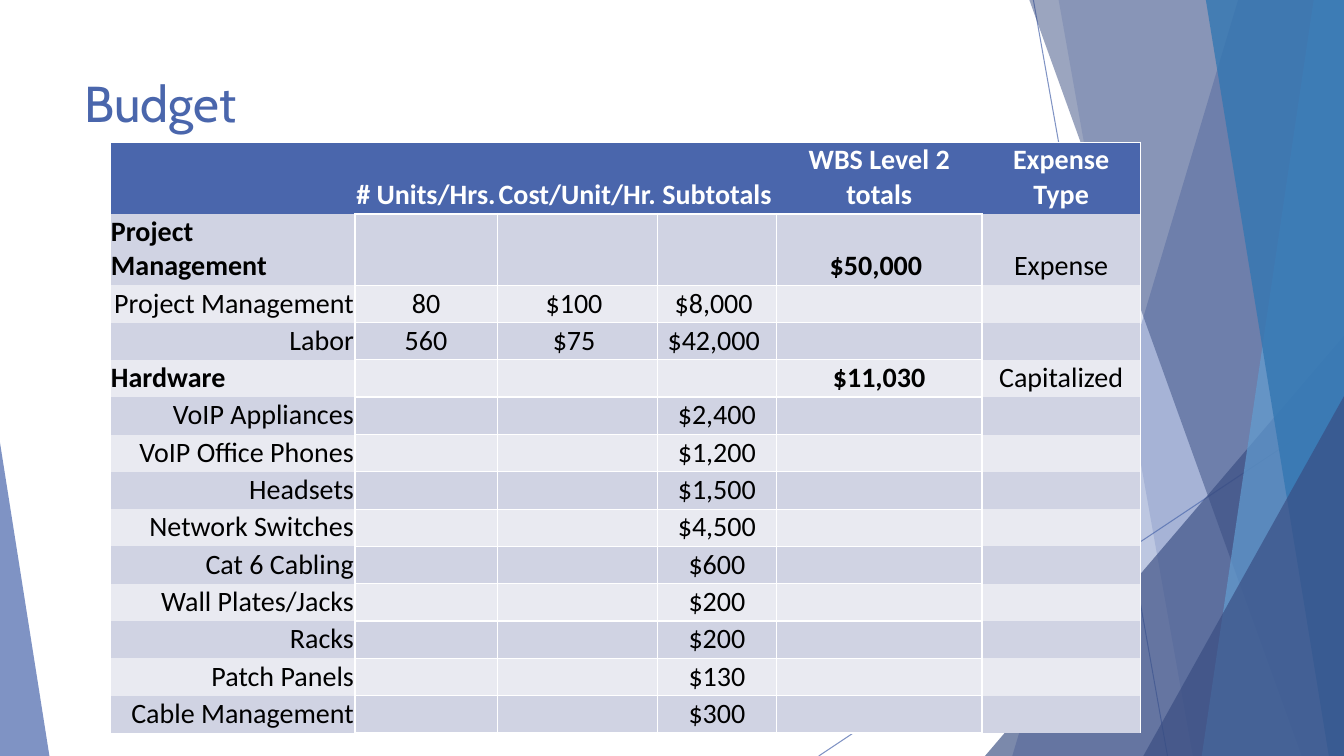
from dataclasses import astuple, dataclass

from lxml.etree import SubElement
from pptx import Presentation
from pptx.dml.color import RGBColor
from pptx.enum.shapes import MSO_CONNECTOR, MSO_SHAPE
from pptx.enum.text import MSO_ANCHOR, MSO_AUTO_SIZE, PP_ALIGN
from pptx.oxml.ns import qn
from pptx.util import Inches, Pt

WIDTH, HEIGHT = Inches(13.33), Inches(7.5)
BLUE = RGBColor(0x4A, 0x66, 0xAC)
NAVY = RGBColor(0x38, 0x4C, 0x81)
SKY = RGBColor(0x62, 0x9D, 0xD1)
OCEAN = RGBColor(0x34, 0x77, 0xB2)
DARK_ROW = RGBColor(0xD0, 0xD3, 0xE3)
LIGHT_ROW = RGBColor(0xE9, 0xEA, 0xF1)
WHITE = RGBColor(0xFF, 0xFF, 0xFF)
BLACK = RGBColor(0, 0, 0)


@dataclass
class Ray:
    """Thin line; positions are percentages of the slide."""
    start: tuple[float, float]
    end: tuple[float, float]


@dataclass
class Band:
    """Full-height area from a slanted left edge to the right of the slide."""
    top_left: float
    bottom_left: float
    color: RGBColor
    opacity: int


@dataclass
class Wedge:
    """Triangle standing on the bottom of the slide."""
    left: float
    top: float
    width: float
    apex: int
    color: RGBColor
    opacity: int


@dataclass
class BudgetLine:
    item: str
    units: str = ""
    cost: str = ""
    subtotal: str = ""
    total: str = ""
    expense: str = ""


DECORATION = [
    Ray((76.89, 0), (86.87, 100)),
    Ray((100, 53.73), (60.92, 100)),
    Band(92.12, 75.32, BLUE, 36),
    Band(78.77, 88.75, BLUE, 20),
    Wedge(73.29, 44.4, 26.71, 1, NAVY, 66),
    Band(76.59, 96.85, NAVY, 50),
    Band(97.75, 89.42, SKY, 70),
    Band(89.72, 98.87, OCEAN, 80),
    Wedge(85.07, 52.4, 14.93, 1, NAVY, 66),
    Wedge(0, 58.53, 3.68, 0, BLUE, 70),
]
COLUMN_WIDTHS = [18.23, 10.58, 11.93, 8.85, 15.3, 11.78]
ROW_HEIGHT = 3.33
BUDGET = [
    BudgetLine("", "# Units/Hrs.", "Cost/Unit/Hr.", "Subtotals",
               "WBS Level 2 totals", "Expense Type"),
    BudgetLine("Project Management", total="$50,000 ", expense="Expense"),
    BudgetLine("Project Management", "80", "$100 ", "$8,000 "),
    BudgetLine("Labor", "560", "$75 ", "$42,000 "),
    BudgetLine("Hardware", total="$11,030", expense="Capitalized"),
    BudgetLine("VoIP Appliances", subtotal="$2,400"),
    BudgetLine("VoIP Office Phones", subtotal="$1,200"),
    BudgetLine("Headsets", subtotal="$1,500"),
    BudgetLine("Network Switches", subtotal="$4,500"),
    BudgetLine("Cat 6 Cabling", subtotal="$600"),
    BudgetLine("Wall Plates/Jacks", subtotal="$200"),
    BudgetLine("Racks", subtotal="$200"),
    BudgetLine("Patch Panels", subtotal="$130"),
    BudgetLine("Cable Management", subtotal="$300"),
]
HARDWARE_ROW = 4
LAST_COLUMN = len(COLUMN_WIDTHS) - 1


def across(percent: float) -> int:
    return round(WIDTH * percent / 100)


def down(percent: float) -> int:
    return round(HEIGHT * percent / 100)


def set_opacity(fill_element, opacity: int) -> None:
    color = fill_element.find(qn("a:srgbClr"))
    SubElement(color, qn("a:alpha"), val=str(opacity * 1000))


def write(frame, text: str, *, size: float, font: str, color: RGBColor,
          bold: bool = False, align=PP_ALIGN.LEFT) -> None:
    para = frame.paragraphs[0]
    para.alignment = align
    span = para.add_run()
    span.text = text
    span.font.size, span.font.name = Pt(size), font
    span.font.bold = bold
    span.font.color.rgb = color


def draw_ray(page, ray: Ray) -> None:
    (x1, y1), (x2, y2) = ray.start, ray.end
    line = page.shapes.add_connector(MSO_CONNECTOR.STRAIGHT, across(x1), down(y1),
                                     across(x2), down(y2))
    line.line.color.rgb = BLUE
    line.line.width = Pt(0.75)
    properties = line._element.spPr
    set_opacity(properties.find(qn("a:ln")).find(qn("a:solidFill")), 70)
    SubElement(properties, qn("a:effectLst"))


def draw_area(page, area: Band | Wedge) -> None:
    if isinstance(area, Band):
        builder = page.shapes.build_freeform(across(area.top_left), 0, scale=1.0)
        builder.add_line_segments([(WIDTH, 0), (WIDTH, HEIGHT),
                                   (across(area.bottom_left), HEIGHT)], close=True)
        shape = builder.convert_to_shape()
    else:
        shape = page.shapes.add_shape(
            MSO_SHAPE.ISOSCELES_TRIANGLE, across(area.left), down(area.top),
            across(area.width), down(100 - area.top))
        shape.adjustments[0] = area.apex
    shape.shadow.inherit = False
    shape.line.fill.background()
    shape.fill.solid()
    shape.fill.fore_color.rgb = area.color
    set_opacity(shape._element.spPr.find(qn("a:solidFill")), area.opacity)


def horizontal_border(edge: int, column: int) -> float:
    """Line width above row number `edge`; zero means no line."""
    if edge == 0:
        return 1
    if column in (0, LAST_COLUMN):
        return 0
    return 1.5 if edge in (1, HARDWARE_ROW + 1) else 1


def vertical_border(row: int, edge: int) -> float:
    return 1 if row > 0 or edge in (0, LAST_COLUMN + 1) else 0


def set_borders(cell, row: int, column: int) -> None:
    properties = cell._tc.get_or_add_tcPr()
    widths = {"a:lnL": vertical_border(row, column),
              "a:lnR": vertical_border(row, column + 1),
              "a:lnT": horizontal_border(row, column),
              "a:lnB": horizontal_border(row + 1, column)}
    for tag, width in widths.items():
        line = SubElement(properties, qn(tag), w=str(Pt(width)))
        if width:
            fill = SubElement(line, qn("a:solidFill"))
            SubElement(fill, qn("a:srgbClr"), val=str(WHITE))
        else:
            SubElement(line, qn("a:noFill"))


def fill_cell(cell, text: str, row: int, column: int) -> None:
    header = row == 0
    heading = bool(BUDGET[row].total)
    set_borders(cell, row, column)
    cell.fill.solid()
    cell.fill.fore_color.rgb = BLUE if header else DARK_ROW if row % 2 else LIGHT_ROW
    cell.vertical_anchor = MSO_ANCHOR.BOTTOM
    cell.margin_left = cell.margin_right = cell.margin_top = Inches(0.01)
    cell.margin_bottom = Inches(0.02)
    if text:
        item_align = PP_ALIGN.LEFT if heading else PP_ALIGN.RIGHT
        write(cell.text_frame, text, size=20, font="Calibri",
              color=WHITE if header else BLACK,
              bold=header or (heading and column < LAST_COLUMN),
              align=PP_ALIGN.CENTER if column else item_align)


def draw_budget(page) -> None:
    table = page.shapes.add_table(len(BUDGET), len(COLUMN_WIDTHS), across(8.18),
                                  down(18.8), across(sum(COLUMN_WIDTHS)), down(72)).table
    for column, width in zip(table.columns, COLUMN_WIDTHS):
        column.width = across(width)
    for row, line in enumerate(BUDGET):
        table.rows[row].height = down(ROW_HEIGHT)
        for column, text in enumerate(astuple(line)):
            fill_cell(table.cell(row, column), text, row, column)


def main() -> None:
    deck = Presentation()
    deck.slide_width, deck.slide_height = WIDTH, HEIGHT
    page = deck.slides.add_slide(deck.slide_layouts[5])
    for part in DECORATION:
        if isinstance(part, Ray):
            draw_ray(page, part)
        else:
            draw_area(page, part)
    title = page.shapes.title
    title.left, title.top = across(5.55), down(8.93)
    title.width, title.height = across(70.52), down(19.2)
    title.text_frame.vertical_anchor = MSO_ANCHOR.TOP
    title.text_frame.auto_size = MSO_AUTO_SIZE.NONE
    write(title.text_frame, "Budget", size=36, font="Cabin", color=BLUE)
    draw_budget(page)
    deck.save("out.pptx")


if __name__ == "__main__":
    main()
